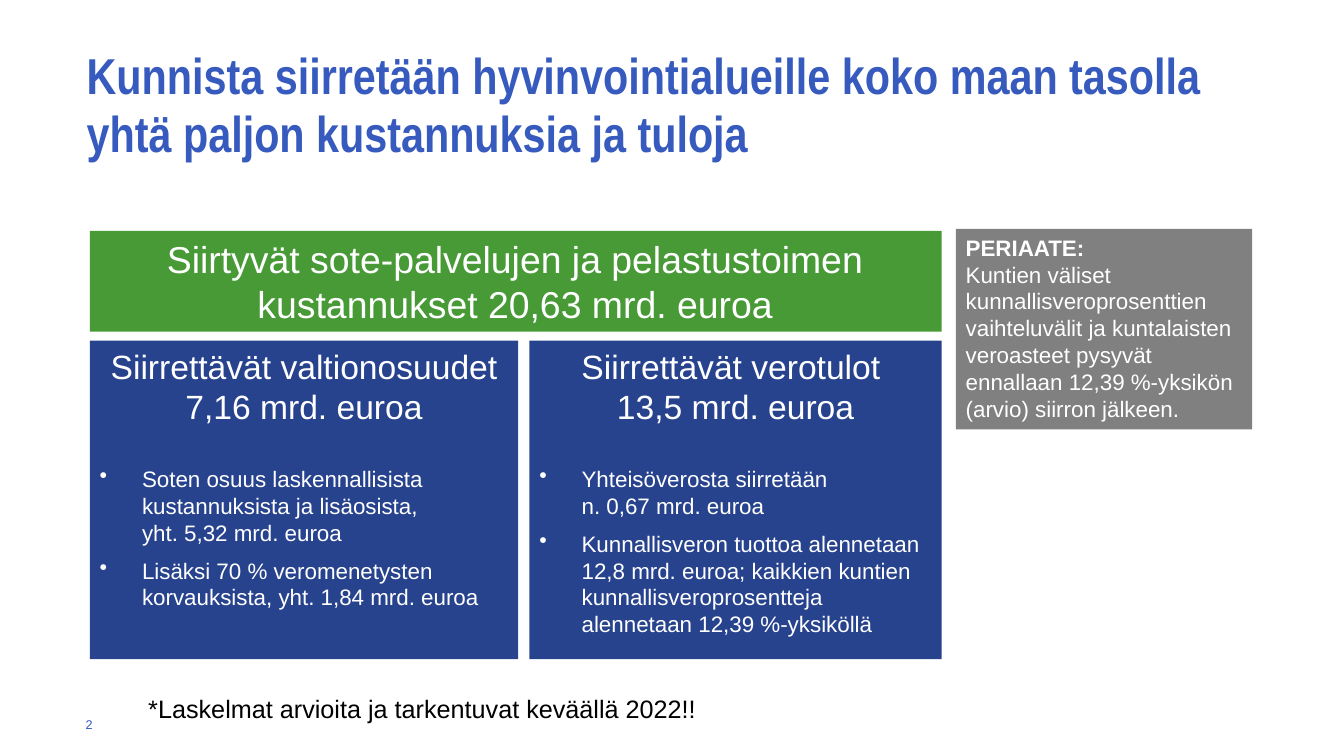
import copy
from dataclasses import dataclass

import lxml.etree
import pptx
import pptx.dml.color
import pptx.enum.shapes
import pptx.enum.text
import pptx.oxml.ns
import pptx.util

ALIGN = pptx.enum.text.PP_ALIGN
ANCHOR = pptx.enum.text.MSO_ANCHOR

TITLE = "Kunnista siirretään hyvinvointialueille koko maan tasolla yhtä paljon kustannuksia ja tuloja"
PAGE_NUMBER = "2"
COSTS = "Siirtyvät sote-palvelujen ja pelastustoimen kustannukset 20,63 mrd. euroa"
INCOME = [
    {
        "heading": ["Siirrettävät valtionosuudet 7,16 mrd. euroa"],
        "bullets": [
            "Soten osuus laskennallisista kustannuksista ja lisäosista, \nyht. 5,32 mrd. euroa",
            "Lisäksi 70 % veromenetysten korvauksista, yht. 1,84 mrd. euroa",
        ],
    },
    {
        "heading": ["Siirrettävät verotulot ", "13,5 mrd. euroa"],
        "bullets": [
            "Yhteisöverosta siirretään \nn. 0,67 mrd. euroa",
            "Kunnallisveron tuottoa alennetaan 12,8 mrd. euroa; kaikkien kuntien "
            "kunnallisveroprosentteja alennetaan 12,39 %-yksiköllä",
        ],
    },
]
PRINCIPLE_HEADING = "PERIAATE:"
PRINCIPLE = (
    "Kuntien väliset kunnallisveroprosenttien vaihteluvälit ja kuntalaisten veroasteet "
    "pysyvät ennallaan 12,39 %-yksikön (arvio) siirron jälkeen."
)
FOOTNOTE = "*Laskelmat arvioita ja tarkentuvat keväällä 2022!!"

SLIDE_SIZE = (13.33, 7.5)
INCOME_COLUMNS = [(0.89, 5.14), (5.25, 9.34)]
SIDE_COLUMN = (9.48, 12.42)
TITLE_COLUMN = (0.86, 12.42)
NUMBER_COLUMN = (0.85, 1.25)
FOOTNOTE_COLUMN = (1.47, 6.95)
TITLE_ROW = (0.33, 1.78)
COSTS_ROW = (2.29, 3.29)
INCOME_ROW = (3.38, 6.54)
SIDE_ROW = (2.27, 4.26)
FOOTNOTE_ROW = (6.88, 7.18)
NUMBER_ROW = (7.06, 7.31)


@dataclass(frozen=True)
class Theme:
    font: str = "Arial"
    title_font: str = "Arial Narrow"
    accent: str = "365ABD"
    green: str = "479A36"
    blue: str = "28438E"
    grey: str = "808080"
    white: str = "FFFFFF"
    black: str = "000000"
    title_size: float = 36
    costs_size: float = 26.7
    heading_size: float = 24
    footnote_size: float = 18
    body_size: float = 16
    number_size: float = 9
    bullet_indent: float = 0.42
    bullet_gap: float = 8
    heading_gap: float = 27.6


THEME = Theme()


def rgb(value):
    return pptx.dml.color.RGBColor.from_string(value)


def place(column, row):
    return [pptx.util.Inches(value) for value in
            (column[0], row[0], column[1] - column[0], row[1] - row[0])]


def add_box(slide, column, row, fill, anchor=ANCHOR.TOP):
    shape = slide.shapes.add_shape(pptx.enum.shapes.MSO_SHAPE.RECTANGLE, *place(column, row))
    shape.shadow.inherit = False
    shape.fill.solid()
    shape.fill.fore_color.rgb = rgb(fill)
    shape.line.fill.background()
    shape.text_frame.word_wrap = True
    shape.text_frame.vertical_anchor = anchor
    return shape.text_frame


def add_label(slide, column, row, anchor=ANCHOR.TOP, wrap=True):
    frame = slide.shapes.add_textbox(*place(column, row)).text_frame
    frame.margin_left = frame.margin_top = frame.margin_right = frame.margin_bottom = 0
    frame.word_wrap = wrap
    frame.vertical_anchor = anchor
    return frame


def write(frame, text, size, color=THEME.white, font=THEME.font, bold=False, align=ALIGN.LEFT):
    first = frame.paragraphs[0]
    paragraph = frame.add_paragraph() if first.runs else first
    paragraph.text = text
    paragraph.alignment = align
    for run in paragraph.runs:
        run.font.size = pptx.util.Pt(size)
        run.font.name = font
        run.font.bold = bold
        run.font.color.rgb = rgb(color)
    for line_break in paragraph._p.findall(pptx.oxml.ns.qn("a:br")):
        line_break.append(copy.deepcopy(paragraph.runs[0].font._element))
    return paragraph


def add_bullet(paragraph):
    properties = paragraph._p.get_or_add_pPr()
    indent = pptx.util.Inches(THEME.bullet_indent)
    properties.set("marL", str(indent))
    properties.set("indent", str(-indent))
    bullet = lxml.etree.SubElement(properties, pptx.oxml.ns.qn("a:buChar"))
    bullet.set("char", "•")
    paragraph.space_after = pptx.util.Pt(THEME.bullet_gap)


def add_income(slide, column, content):
    frame = add_box(slide, column, INCOME_ROW, THEME.blue)
    for line in content["heading"]:
        heading = write(frame, line, THEME.heading_size, align=ALIGN.CENTER)
    heading.space_after = pptx.util.Pt(THEME.heading_gap)
    for line in content["bullets"]:
        add_bullet(write(frame, line, THEME.body_size))


def main():
    presentation = pptx.Presentation()
    presentation.slide_width, presentation.slide_height = map(pptx.util.Inches, SLIDE_SIZE)
    slide = presentation.slides.add_slide(presentation.slide_layouts[6])

    title = write(add_label(slide, TITLE_COLUMN, TITLE_ROW, ANCHOR.MIDDLE), TITLE,
                  THEME.title_size, THEME.accent, THEME.title_font, bold=True)
    title.line_spacing = 0.95
    write(add_label(slide, NUMBER_COLUMN, NUMBER_ROW, ANCHOR.MIDDLE), PAGE_NUMBER,
          THEME.number_size, THEME.accent)

    costs_column = (INCOME_COLUMNS[0][0], INCOME_COLUMNS[-1][1])
    write(add_box(slide, costs_column, COSTS_ROW, THEME.green, ANCHOR.MIDDLE), COSTS,
          THEME.costs_size, align=ALIGN.CENTER)
    for column, content in zip(INCOME_COLUMNS, INCOME):
        add_income(slide, column, content)

    principle = add_box(slide, SIDE_COLUMN, SIDE_ROW, THEME.grey)
    write(principle, PRINCIPLE_HEADING, THEME.body_size, bold=True)
    write(principle, PRINCIPLE, THEME.body_size)

    write(add_label(slide, FOOTNOTE_COLUMN, FOOTNOTE_ROW, wrap=False), FOOTNOTE,
          THEME.footnote_size, THEME.black)
    presentation.save("out.pptx")


if __name__ == "__main__":
    main()
